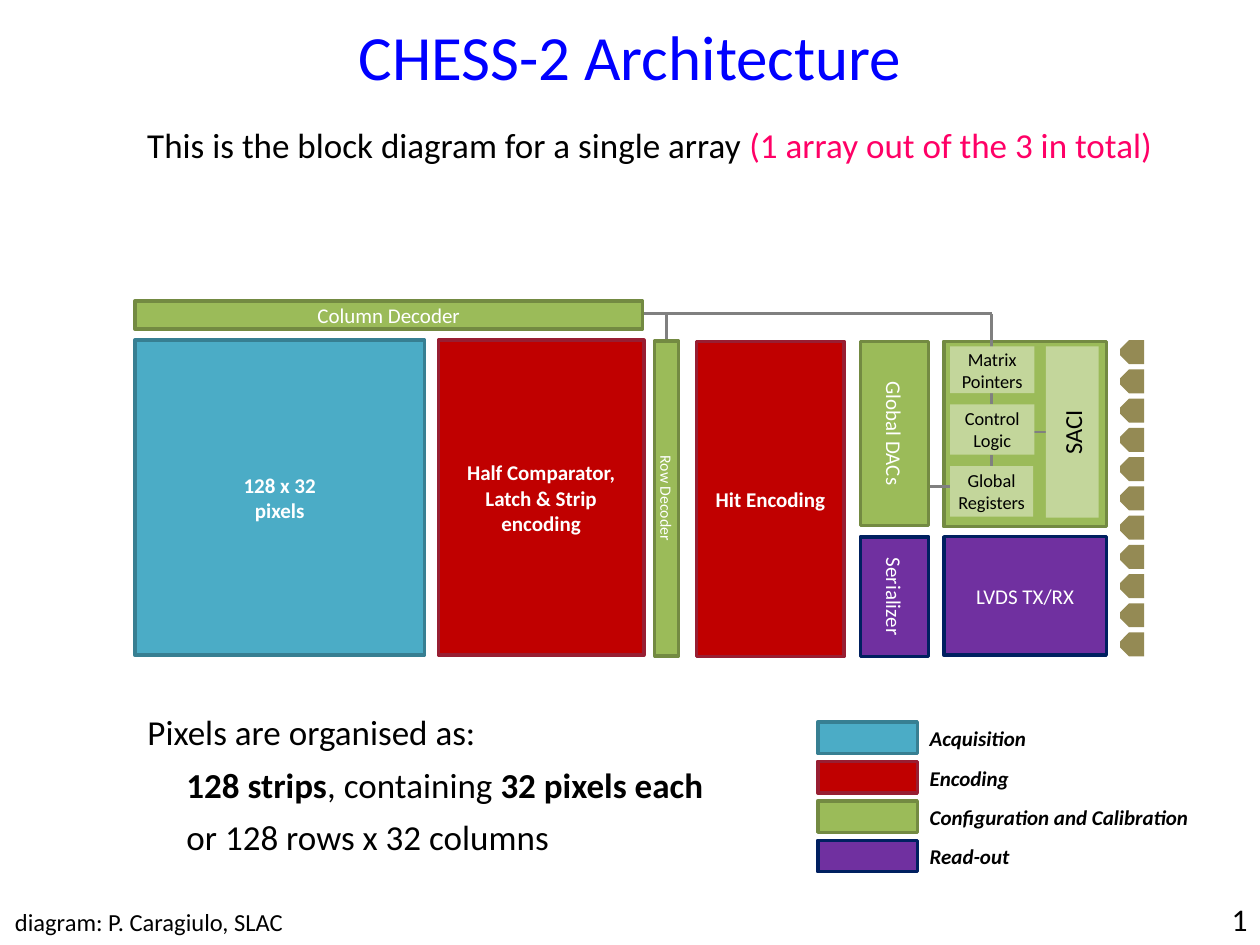
"""Build the CHESS-2 architecture slide with its block diagram and legend."""
from lxml import etree
from pptx import Presentation
from pptx import util as u
from pptx.dml.color import RGBColor
from pptx.enum import shapes, text
from pptx.oxml.ns import qn

color = RGBColor.from_string
BLACK, WHITE, GREY, LIGHT_GREEN, OLIVE = "000000", "FFFFFF", "808080", "C3D69B", "948A54"
BLUE, RED = ("4BACC6", "377F92"), ("C00000", "981E32")
GREEN, PURPLE = ("9BBB59", "738A42"), ("7030A0", "002060")
LEFT, CENTER, RIGHT = text.PP_ALIGN.LEFT, text.PP_ALIGN.CENTER, text.PP_ALIGN.RIGHT
TOP, MIDDLE = text.MSO_ANCHOR.TOP, text.MSO_ANCHOR.MIDDLE


def write_text(shape, paragraphs, size, ink, align=LEFT, anchor=TOP, wrap=True, inset=None, **styles):
    """Fill a shape with paragraphs, each a list of (words, style overrides)."""
    frame = shape.text_frame
    frame.auto_size = text.MSO_AUTO_SIZE.NONE
    frame.word_wrap, frame.vertical_anchor = wrap, anchor
    if inset is not None:
        for side in ("left", "top", "right", "bottom"):
            setattr(frame, f"margin_{side}", u.Inches(inset))
    for index, runs in enumerate(paragraphs):
        paragraph = frame.add_paragraph() if index else frame.paragraphs[0]
        paragraph.alignment = align
        for words, overrides in runs:
            run = paragraph.add_run()
            run.text = words
            values = {"name": "Calibri", "size": u.Pt(size), **styles, **overrides}
            run.font.color.rgb = color(values.pop("ink", ink))
            for name, value in values.items():
                setattr(run.font, name, value)


def add_box(place, fill, outline=None, kind=shapes.MSO_SHAPE.RECTANGLE):
    """Add a filled shape with an optional 2 pt outline."""
    shape = slide.shapes.add_shape(kind, *map(u.Inches, place))
    shape.shadow.inherit = False
    shape.fill.solid()
    shape.fill.fore_color.rgb = color(fill)
    if outline:
        shape.line.color.rgb = color(outline)
        shape.line.width = u.Pt(2)
    else:
        shape.line.fill.background()
    return shape


presentation = Presentation()
presentation.slide_width, presentation.slide_height = u.Inches(10), u.Inches(7.5)
slide = presentation.slides.add_slide(presentation.slide_layouts[1])
title, body = slide.placeholders
for shape, place in ((title, (0.5, 0.13, 9, 0.62)), (body, (1.07, 5.59, 5.31, 1.28))):
    shape.left, shape.top, shape.width, shape.height = map(u.Inches, place)

write_text(title, [[("CHESS-2 Architecture", {})]], 36, "0000FF", CENTER, MIDDLE)
write_text(body, [
    [("Pixels are organised as:", {})],
    [("128 strips", {"bold": True}), (", containing ", {}), ("32 pixels each", {"bold": True})],
    [("or 128 rows x 32 columns", {})],
], 20, BLACK)
for paragraph, indent in zip(body.text_frame.paragraphs, (0, 0.31, 0.31)):
    properties = paragraph._p.get_or_add_pPr()
    properties.set("marL", str(u.Inches(indent)))
    properties.set("indent", "0")
    etree.SubElement(properties, qn("a:buNone"))
    paragraph.space_before, paragraph.space_after = u.Pt(0), u.Pt(6)

captions = [
    ((1.07, 0.93, 8.79, 0.44), 20, LEFT, TOP,
     [("This is the block diagram for a single array ", {}),
      ("(1 array out of the 3 in total)", {"ink": "FF0066"})]),
    ((0.02, 7.15, 2.91, 0.34), 14, LEFT, TOP, [("diagram: P. Caragiulo, SLAC", {})]),
    ((9.25, 7.09, 0.75, 0.4), 18, RIGHT, MIDDLE, [("7", {})]),
]
for place, size, align, anchor, runs in captions:
    caption = slide.shapes.add_textbox(*map(u.Inches, place))
    write_text(caption, [runs], size, BLACK, align, anchor)
number = caption.text_frame.paragraphs[0].runs[0]._r
number.tag = qn("a:fld")
number.set("id", "{B6F15528-21DE-4FAA-801E-634DDDAF4B2B}")
number.set("type", "slidenum")

add_box((7.49, 2.71, 1.29, 1.47), *GREEN)
wires = [
    (5.29, 2.49, 5.29, 2.7), (5.11, 2.49, 7.87, 2.49), (7.87, 2.49, 7.87, 2.75),
    (7.87, 3.11, 7.87, 3.21), (7.87, 3.61, 7.87, 3.71),
    (8.13, 3.43, 8.36, 3.43), (7.3, 3.86, 7.54, 3.86),
]
for ends in wires:
    wire = slide.shapes.add_connector(shapes.MSO_CONNECTOR.STRAIGHT, *map(u.Inches, ends))
    wire.line.color.rgb = color(GREY)
    wire.line.width = u.Pt(1.5)
    etree.SubElement(wire._element.spPr, qn("a:effectLst"))

blocks = [
    ("128 x 32\npixels", (1.07, 2.7, 2.3, 2.5), BLUE, 12, True, None),
    ("Column Decoder", (1.07, 2.39, 4.03, 0.22), GREEN, 12, False, None),
    ("Half Comparator,\nLatch & Strip encoding", (3.48, 2.7, 1.63, 2.5), RED, 12, True, None),
    ("Hit Encoding", (5.53, 2.71, 1.17, 2.5), RED, 12, True, None),
    ("Row Decoder", (4.04, 3.86, 2.5, 0.19), GREEN, 9, False, "turned"),
    ("Global DACs", (6.83, 2.71, 0.54, 1.46), GREEN, 12, False, "vert"),
    ("Serializer", (6.83, 4.26, 0.54, 0.95), PURPLE, 12, False, "vert"),
    ("LVDS TX/RX", (7.49, 4.26, 1.29, 0.94), PURPLE, 12, False, None),
    ("SACI", (8.3, 2.75, 0.42, 1.36), (LIGHT_GREEN,), 14, False, "vert270"),
    ("Matrix\nPointers", (7.54, 2.75, 0.67, 0.37), (LIGHT_GREEN,), 10.5, False, None),
    ("Control Logic", (7.54, 3.21, 0.67, 0.4), (LIGHT_GREEN,), 10.5, False, None),
    ("Global Registers", (7.54, 3.7, 0.66, 0.4), (LIGHT_GREEN,), 10.5, False, None),
]
for label, place, palette, size, bold, direction in blocks:
    block = add_box(place, *palette)
    ink = BLACK if palette == (LIGHT_GREEN,) else WHITE
    inset = 0 if size == 10.5 or palette == PURPLE else None
    write_text(block, [[(line, {})] for line in label.split("\n")], size, ink,
               CENTER, MIDDLE, inset=inset, bold=bold)
    if direction == "turned":
        block.rotation = 90
    elif direction:
        block.text_frame._txBody.bodyPr.set("vert", direction)

for index in range(11):
    pad = add_box((8.89, 2.7 + index * 0.232, 0.19, 0.19), OLIVE,
                  kind=shapes.MSO_SHAPE.SNIP_2_SAME_RECTANGLE)
    pad.rotation = 270
    pad.adjustments[0], pad.adjustments[1] = 0.37, 0

legend = [("Acquisition", BLUE), ("Encoding", RED),
          ("Configuration and Calibration", GREEN), ("Read-out", PURPLE)]
for index, (label, palette) in enumerate(legend):
    top = 5.73 + index * 0.313
    add_box((6.49, top, 0.79, 0.25), *palette)
    entry = slide.shapes.add_textbox(*map(u.Inches, (7.28, top - 0.02, 2.58, 0.3)))
    write_text(entry, [[(label, {})]], 12, BLACK, wrap=False, bold=True, italic=True)

presentation.save("out.pptx")
